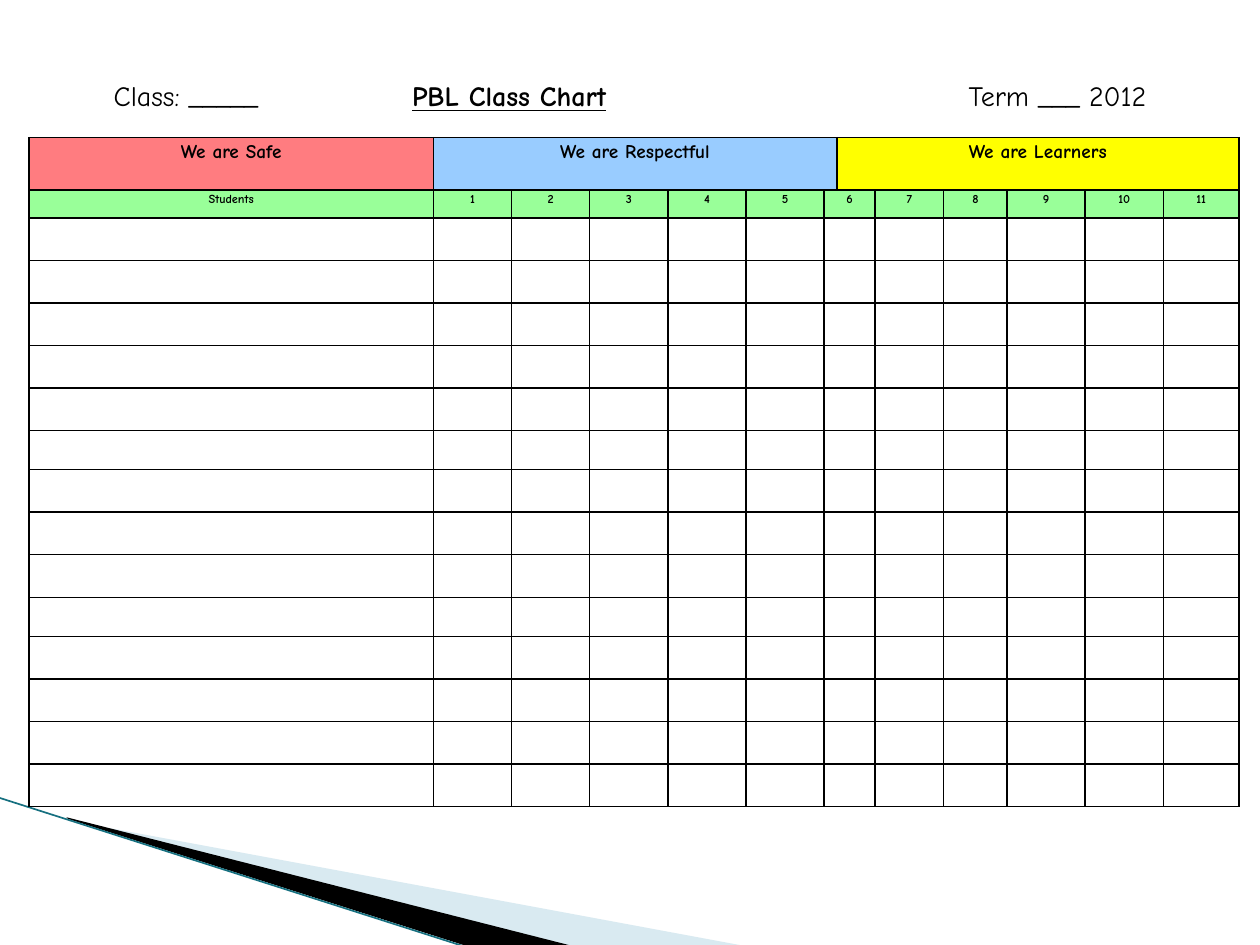
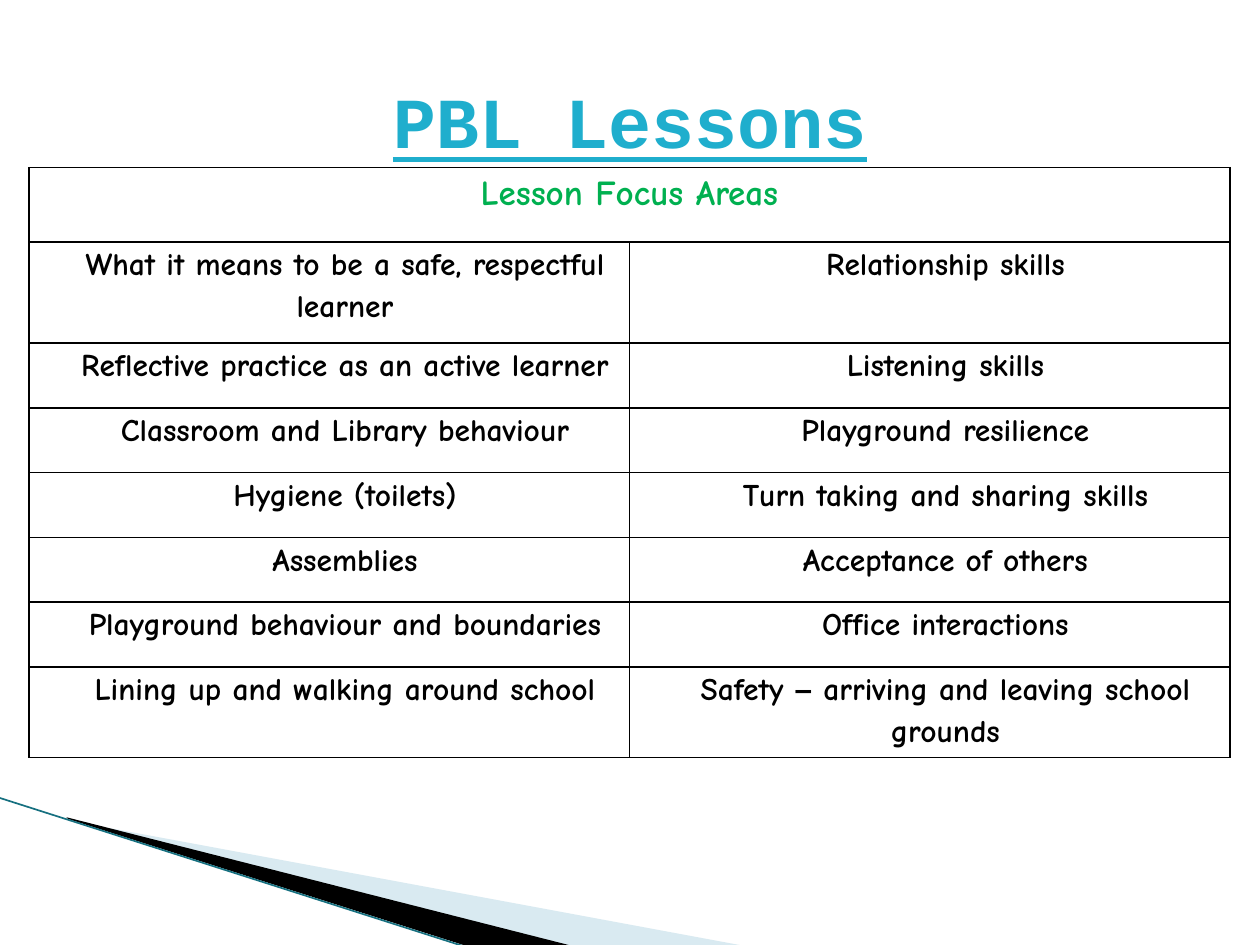
from lxml.etree import SubElement
from pptx import Presentation
from pptx.dml.color import RGBColor
from pptx.enum.shapes import MSO_CONNECTOR as Line
from pptx.enum.text import MSO_ANCHOR as Anchor, PP_ALIGN as Align
from pptx.oxml.ns import qn
from pptx.util import Pt

COMIC = "Comic Neue"
BLACK, GREEN = "000000", "99FF99"

# Corner decoration, in points: outline, colour, opacity in percent
WEDGES = [
    ([(39.6, 468.7), (428.4, 540.7), (328.3, 540.7), (39.6, 468)], "A0CBDC", 40),
    ([(38.2, 467.3), (329, 540.7), (267.8, 541.4), (38.9, 468)], BLACK, 100),
]
EDGE = (-0.7, 455.8, 267.1, 541.4)
EDGE_HUE = "167080"

# Class chart
HEADING = ["Class: _____", "PBL Class Chart", "Term ___ 2012"]
STOPS = [170.5, 488.5]
RULES = [  # text, colour, first column, last column
    ("We are Safe", "FF7C80", 0, 0),
    ("We are Respectful", "99CCFF", 1, 6),
    ("We are Learners", "FFFF00", 7, 12),
]
PUPIL_COLS = [231] + [44.7] * 5 + [7.2, 21.8, 39.3, 36.2, 44.7, 44.7, 43.2]
SPLIT = 6  # week 6 covers this column and the next
TALL, SHORT = 24.3, 22.3
PUPIL_ROWS = [30, 16] + [SHORT if n in (5, 9) else TALL for n in range(14)]

# Lessons
FOCUS = "Lesson Focus Areas"
LESSONS = [
    ("What it means to be a safe, respectful learner", "Relationship skills"),
    ("Reflective practice as an active learner", "Listening skills"),
    ("Classroom and Library behaviour", "Playground resilience"),
    ("Hygiene (toilets)", "Turn taking and sharing skills"),
    ("Assemblies", "Acceptance of others"),
    ("Playground behaviour and boundaries", "Office interactions"),
    ("Lining up and walking around school",
     "Safety – arriving and leaving school grounds"),
]
LESSON_ROWS = [42.5, 57.8] + [37] * 5 + [51.8]


def color(code):
    return RGBColor.from_string(code)


def style(font, size, hue=BLACK, name=COMIC, bold=False, under=False):
    font.name, font.size = name, Pt(size)
    font.bold, font.underline = bold, under
    font.color.rgb = color(hue)


def new_slide(deck):
    """Add a blank slide with the corner decoration."""
    slide = deck.slides.add_slide(deck.slide_layouts[6])
    for points, hue, alpha in WEDGES:
        pen = slide.shapes.build_freeform(*points[0], scale=Pt(1))
        pen.add_line_segments(points[1:], close=True)
        wedge = pen.convert_to_shape()
        wedge.shadow.inherit = False
        wedge.line.fill.background()
        wedge.fill.solid()
        wedge.fill.fore_color.rgb = color(hue)
        if alpha < 100:
            tint = wedge._element.spPr.find(".//" + qn("a:srgbClr"))
            SubElement(tint, qn("a:alpha"), val=str(alpha * 1000))
    edge = slide.shapes.add_connector(Line.STRAIGHT, *map(Pt, EDGE))
    edge.line.color.rgb = color(EDGE_HUE)
    edge.line.width = Pt(0.95)
    SubElement(edge._element.spPr, qn("a:effectLst"))
    return slide


def add_box(slide, left, top, width, height, anchor):
    box = slide.shapes.add_textbox(*map(Pt, (left, top, width, height)))
    frame = box.text_frame
    frame.word_wrap = True
    frame.vertical_anchor = anchor
    frame.margin_left = frame.margin_right = 0
    frame.margin_top = frame.margin_bottom = 0
    return frame.paragraphs[0]


def add_grid(slide, left, top, cols, rows, inset):
    """Add a table with thin black borders and no fill."""
    table = slide.shapes.add_table(
        len(rows), len(cols), Pt(left), Pt(top), Pt(sum(cols)), Pt(sum(rows))).table
    table.first_row = table.horz_banding = False
    for col, width in zip(table.columns, cols):
        col.width = Pt(width)
    for row, height in zip(table.rows, rows):
        row.height = Pt(height)
    for cell in table.iter_cells():
        cell.margin_left = cell.margin_right = Pt(inset)
        cell.margin_top = cell.margin_bottom = 0
        props = cell._tc.get_or_add_tcPr()
        for side in ("lnL", "lnR", "lnT", "lnB"):
            line = SubElement(props, qn("a:" + side), w=str(Pt(1)))
            fill = SubElement(line, qn("a:solidFill"))
            SubElement(fill, qn("a:srgbClr"), val=BLACK)
        cell.fill.background()
        style(cell.text_frame.paragraphs[0].font, 7)
    return table


def write(cell, text, size, hue=BLACK, back=None, indent=0):
    para = cell.text_frame.paragraphs[0]
    para.alignment = Align.CENTER
    para.line_spacing = 1.15
    if indent:
        para._p.get_or_add_pPr().set("marL", str(Pt(indent)))
    style(para.font, size, hue, bold=True)
    for part in filter(None, text.partition("–")):
        run = para.add_run()
        run.text = part
        if part == "–":
            run.font.name = "Arial"
    if back:
        cell.fill.solid()
        cell.fill.fore_color.rgb = color(back)


def class_chart(deck):
    slide = new_slide(deck)
    table = add_grid(slide, 16.6, 78.7, PUPIL_COLS, PUPIL_ROWS, 2.9)
    for text, hue, first, last in RULES:
        if last > first:
            table.cell(0, first).merge(table.cell(0, last))
        write(table.cell(0, first), text, 11, back=hue)
    for row in range(1, len(PUPIL_ROWS)):
        table.cell(row, SPLIT).merge(table.cell(row, SPLIT + 1))
    write(table.cell(1, 0), "Students", 7, back=GREEN)
    for week in range(1, 12):
        col = week + (week > SPLIT)
        write(table.cell(1, col), str(week), 7, back=GREEN)

    para = add_box(slide, 65, 45, 640, 30, Anchor.TOP)
    tabs = SubElement(para._p.get_or_add_pPr(), qn("a:tabLst"))
    for stop in STOPS:
        SubElement(tabs, qn("a:tab"), pos=str(Pt(stop)), algn="l")
    style(para.font, 16)
    for n, text in enumerate(HEADING):
        if n:
            para.add_run().text = "\t"
        run = para.add_run()
        run.text = text
        if n == 1:
            run.font.bold = run.font.underline = True


def lessons(deck):
    slide = new_slide(deck)
    title = add_box(slide, 36, 23.5, 648, 90, Anchor.MIDDLE)
    title.text = "PBL Lessons"
    title.alignment = Align.CENTER
    style(title.font, 41, "1FAECD", "Courier New", bold=True, under=True)
    table = add_grid(slide, 16.6, 95.8, [343.1] * 2, LESSON_ROWS, 5)
    table.cell(0, 0).merge(table.cell(0, 1))
    write(table.cell(0, 0), FOCUS, 20, "00B050")
    for row, pair in enumerate(LESSONS, 1):
        for col, text in enumerate(pair):
            write(table.cell(row, col), text, 18, indent=18)


def main():
    deck = Presentation()
    deck.slide_width, deck.slide_height = Pt(720), Pt(540)
    class_chart(deck)
    lessons(deck)
    deck.save("out.pptx")


if __name__ == "__main__":
    main()
